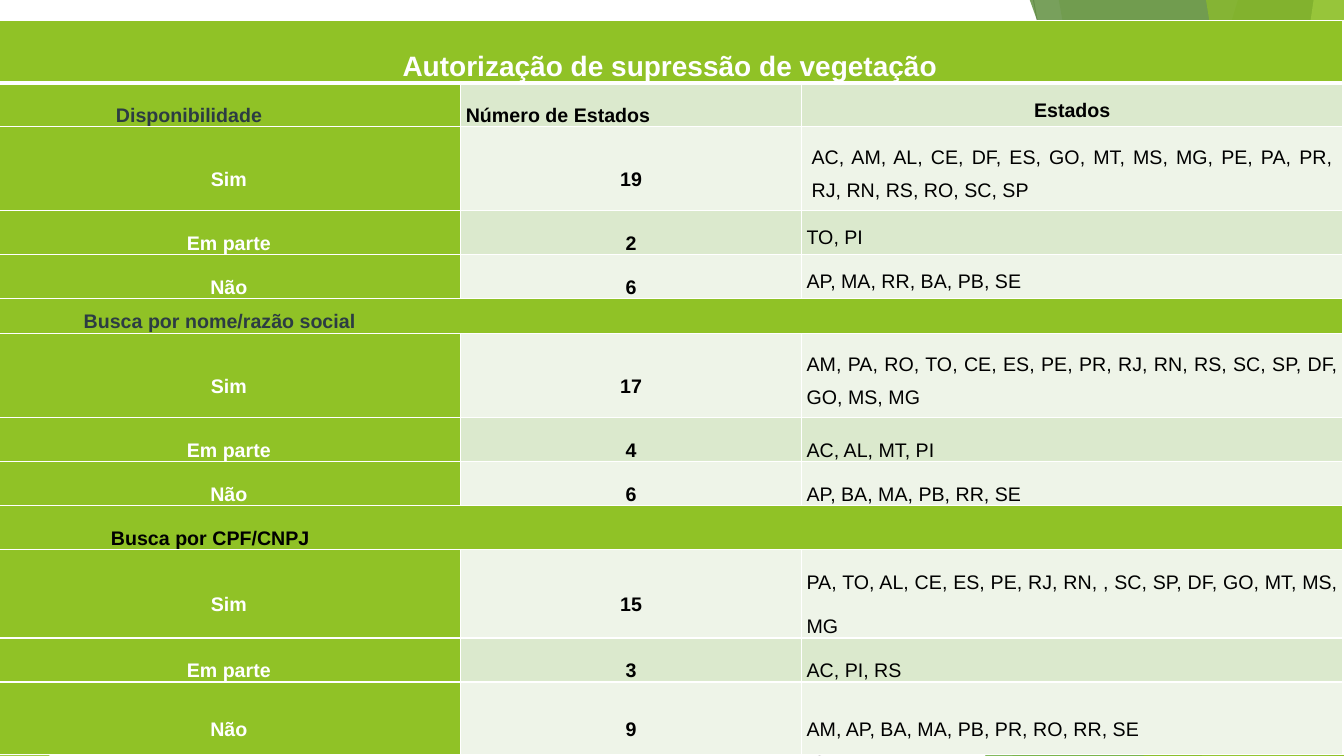
from lxml import etree
from pptx import Presentation
from pptx.dml.color import RGBColor as RGB
from pptx.enum.shapes import MSO_CONNECTOR as Connector, MSO_SHAPE as Shape
from pptx.enum.text import MSO_ANCHOR as Anchor, PP_ALIGN as Align
from pptx.oxml.ns import qn
from pptx.util import Inches, Pt

COLORS = {
    "green": "90C226", "leaf": "54A021", "forest": "3F7818", "lime": "BFE471",
    "band": "DBE9CD", "pale": "EEF4E8", "slate": "2C3C43",
    "white": "FFFFFF", "black": "000000", "gray": "BFBFBF", "silver": "D8D8D8",
}
COLUMNS = [4.6, 3.38, 5.37]
ROWS = [0.55, 0.38, 0.83, 0.38, 0.38, 0.35, 0.83, 0.38, 0.38, 0.38, 0.84, 0.38, 0.72]

# Each answer: label, number of states, states, line spacing of the states
AVAILABILITY = [
    ("Sim", "19", "AC, AM, AL, CE, DF, ES, GO, MT, MS, MG, PE, PA, PR, RJ, RN, RS, RO, SC, SP", 1.5),
    ("Em parte", "2", "TO, PI", 1.5),
    ("Não", "6", "AP, MA, RR, BA, PB, SE", 1.5),
]
NAME_SEARCH = [
    ("Sim", "17", "AM, PA, RO, TO, CE, ES, PE, PR, RJ, RN, RS, SC, SP, DF, GO, MS, MG", 1.5),
    ("Em parte", "4", "AC, AL, MT, PI", 2.0),
    ("Não", "6", "AP, BA, MA, PB, RR, SE", 2.0),
]
ID_SEARCH = [
    ("Sim", "15", "PA, TO, AL, CE, ES, PE, RJ, RN, , SC, SP, DF, GO, MT, MS, MG", 2.0),
    ("Em parte", "3", "AC, PI, RS", 2.0),
    ("Não", "9", "AM, AP, BA, MA, PB, PR, RO, RR, SE", 2.0),
]


class SlideBuilder:
    """Holds the style and the current slide."""

    font = "Arial"

    def __init__(self, slide):
        self.slide = slide

    def line(self, start, end, color):
        ends = [Inches(value) for value in (*start, *end)]
        ray = self.slide.shapes.add_connector(Connector.STRAIGHT, *ends)
        ray.line.color.rgb = RGB.from_string(COLORS[color])
        ray.line.width = Pt(0.75)
        etree.SubElement(ray.element.spPr, qn("a:effectLst"))

    def tint(self, shape, color, opacity):
        shape.shadow.inherit = False
        shape.fill.solid()
        shape.fill.fore_color.rgb = RGB.from_string(COLORS[color])
        solid = next(shape.element.spPr.iter(qn("a:srgbClr")))
        etree.SubElement(solid, qn("a:alpha"), val=str(opacity * 1000))
        shape.line.fill.background()

    def facet(self, top_left, bottom_left, color, opacity):
        """Panel between a slanted left edge and the right side of the slide."""
        top, bottom, right = -0.01, 7.5, 13.33
        corners = [(Inches(x), Inches(y)) for x, y in (
            (top_left, top), (right, top), (right, bottom), (bottom_left, bottom))]
        outline = self.slide.shapes.build_freeform(*corners[0], scale=1.0)
        outline.add_line_segments(corners[1:], close=True)
        self.tint(outline.convert_to_shape(), color, opacity)

    def triangle(self, left, top, width, height, apex, color, opacity):
        box = [Inches(value) for value in (left, top, width, height)]
        corner = self.slide.shapes.add_shape(Shape.ISOSCELES_TRIANGLE, *box)
        corner.adjustments[0] = apex
        self.tint(corner, color, opacity)

    def table(self, left, top, columns, rows):
        grid = self.slide.shapes.add_table(
            len(rows), len(columns), Inches(left), Inches(top),
            Inches(sum(columns)), Inches(sum(rows))).table
        grid.first_row = grid.horz_banding = False
        for column, width in zip(grid.columns, columns):
            column.width = Inches(width)
        for row, height in zip(grid.rows, rows):
            row.height = Inches(height)
        return grid

    def border(self, cell, bottom):
        sides = [("a:lnL", 1), ("a:lnR", 1), ("a:lnT", 1), ("a:lnB", bottom)]
        properties = cell._tc.get_or_add_tcPr()
        for place, (side, width) in enumerate(sides):
            edge = etree.Element(qn(side), w=str(Pt(width)))
            solid = etree.SubElement(edge, qn("a:solidFill"))
            etree.SubElement(solid, qn("a:srgbClr"), val=COLORS["white"])
            properties.insert(place, edge)

    def cell(self, cell, text, fill, color="black", align=Align.CENTER, spacing=2.0,
             bold=True, size=14, left=0.05, right=0.05, bottom=1):
        cell.fill.solid()
        cell.fill.fore_color.rgb = RGB.from_string(COLORS[fill])
        self.border(cell, bottom)
        cell.vertical_anchor = Anchor.MIDDLE
        cell.margin_left, cell.margin_right = Inches(left), Inches(right)
        cell.margin_top = cell.margin_bottom = 0
        paragraph = cell.text_frame.paragraphs[0]
        paragraph.alignment, paragraph.line_spacing = align, spacing
        font = paragraph.font
        font.name, font.size, font.bold = self.font, Pt(size), bold
        font.color.rgb = RGB.from_string(COLORS[color])
        if text:
            paragraph.add_run().text = text

    def heading(self, grid, row, text, **style):
        """Green row across all columns."""
        cells = list(grid.rows[row].cells)
        for spanned in cells[1:]:
            self.cell(spanned, "", "green", bottom=style.get("bottom", 1))
        self.cell(cells[0], text, "green", **style)
        cells[0].merge(cells[-1])

    def answers(self, grid, first_row, answers, inset=0.05):
        """Three rows with alternating fills; inset applies to the first list."""
        for step, (label, count, states, spacing) in enumerate(answers):
            fill = "band" if step % 2 else "pale"
            margin = 0.05 if step else inset
            name, number, members = grid.rows[first_row + step].cells
            self.cell(name, label, "green", "white")
            self.cell(number, count, fill)
            self.cell(members, states, fill, align=Align.JUSTIFY, spacing=spacing,
                      bold=False, left=margin, right=margin)


def main():
    deck = Presentation()
    deck.slide_width, deck.slide_height = Inches(13.33), Inches(7.5)
    builder = SlideBuilder(deck.slides.add_slide(deck.slide_layouts[6]))

    # Faceted backdrop
    builder.line((10.25, 0), (11.58, 7.5), "gray")
    builder.line((13.33, 4.03), (8.12, 7.5), "silver")
    builder.facet(12.28, 10.04, "green", 30)
    builder.facet(10.5, 11.83, "green", 20)
    builder.triangle(9.77, 3.33, 3.56, 4.17, 1, "leaf", 72)
    builder.facet(10.21, 12.91, "forest", 70)
    builder.facet(13.03, 11.92, "lime", 70)
    builder.facet(11.96, 13.18, "green", 65)
    builder.triangle(11.34, 3.93, 1.99, 3.57, 1, "green", 80)
    builder.triangle(0, 4.39, 0.49, 3.11, 0, "green", 85)

    # Table title and column heads
    grid = builder.table(-0.03, 0.2, COLUMNS, ROWS)
    builder.heading(grid, 0, "Autorização de supressão de vegetação",
                    color="white", size=20, bottom=3)
    availability, number, states = grid.rows[1].cells
    builder.cell(availability, "Disponibilidade", "green", "slate", Align.JUSTIFY, left=1.18)
    builder.cell(number, "Número de Estados", "band", align=Align.JUSTIFY)
    builder.cell(states, "Estados", "band", spacing=1.5)

    # Three sections of answers
    builder.answers(grid, 2, AVAILABILITY, inset=0.1)
    builder.heading(grid, 5, "Busca por nome/razão social", color="slate",
                    align=Align.JUSTIFY, spacing=1.5, left=0.86)
    builder.answers(grid, 6, NAME_SEARCH)
    builder.heading(grid, 9, "Busca por CPF/CNPJ", align=Align.JUSTIFY, left=1.13)
    builder.answers(grid, 10, ID_SEARCH)

    deck.save("out.pptx")


if __name__ == "__main__":
    main()
